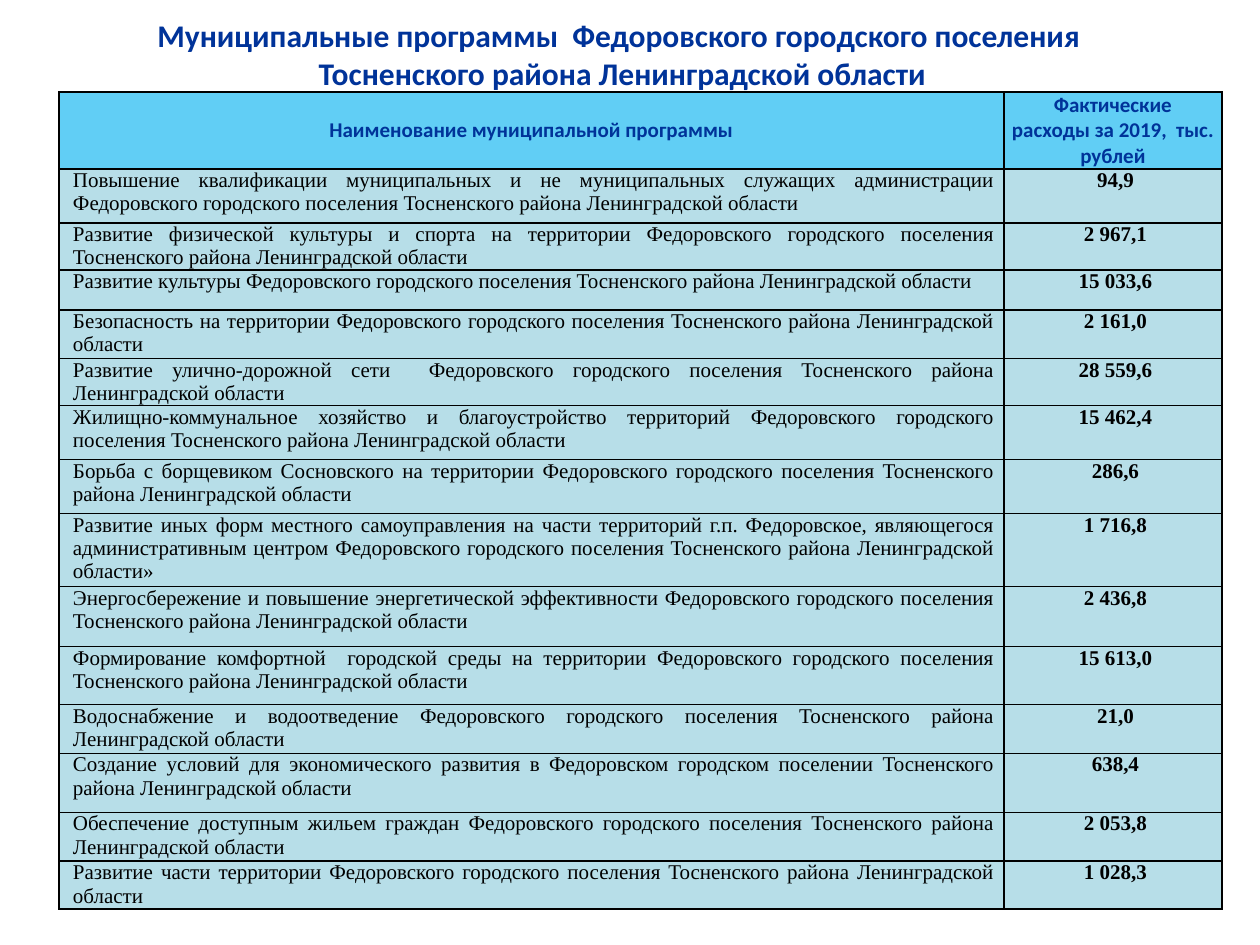
"""Build a slide with a table of municipal programmes and their spending."""
from lxml.etree import SubElement
from pptx import Presentation
from pptx.dml.color import RGBColor
from pptx.enum.text import MSO_ANCHOR, PP_ALIGN
from pptx.oxml.ns import qn
from pptx.util import Pt

TITLE = [
    "Муниципальные программы  Федоровского городского поселения ",
    "Тосненского района Ленинградской области",
]
HEADERS = [
    ["Наименование муниципальной программы"],
    ["Фактические", "расходы за 2019,  тыс. рублей"],
]
HEADER_HEIGHT = 59
PROGRAMMES = [
    ("Повышение квалификации муниципальных и не муниципальных служащих администрации Федоровского городского поселения Тосненского района Ленинградской области", "94,9", 54),
    ("Развитие физической культуры и спорта на территории Федоровского городского поселения Тосненского района Ленинградской области", "2 967,1", 47),
    ("Развитие культуры Федоровского городского поселения Тосненского района Ленинградской области", "15 033,6", 40),
    ("Безопасность на территории Федоровского городского поселения Тосненского района Ленинградской области", "2 161,0", 49),
    ("Развитие улично-дорожной сети  Федоровского городского поселения Тосненского района Ленинградской области", "28 559,6", 39),
    ("Жилищно-коммунальное хозяйство и благоустройство территорий Федоровского городского поселения Тосненского района Ленинградской области", "15 462,4", 54),
    ("Борьба с борщевиком Сосновского на территории Федоровского городского поселения Тосненского района Ленинградской области", "286,6", 54),
    ("Развитие иных форм местного самоуправления на части территорий г.п. Федоровское, являющегося административным центром Федоровского городского поселения Тосненского района Ленинградской области»", "1 716,8", 73),
    ("Энергосбережение и повышение энергетической эффективности Федоровского городского поселения Тосненского района Ленинградской области", "2 436,8", 60),
    ("Формирование комфортной  городской среды на территории Федоровского городского поселения Тосненского района Ленинградской области", "15 613,0", 58),
    ("Водоснабжение и водоотведение Федоровского городского поселения Тосненского района Ленинградской области", "21,0", 49),
    ("Создание условий для экономического развития в Федоровском городском поселении Тосненского района Ленинградской области", "638,4", 59),
    ("Обеспечение доступным жильем граждан Федоровского городского поселения Тосненского района Ленинградской области", "2 053,8", 49),
    ("Развитие части территории Федоровского городского поселения Тосненского района Ленинградской области", "1 028,3", 48),
]
COLUMN_WIDTHS = [945, 218]
TABLE_LEFT, TABLE_TOP = 59, 92
CELL_INSET, CELL_INDENT = 9, 5

NAVY = RGBColor(0x00, 0x33, 0x99)
BLACK = RGBColor(0x00, 0x00, 0x00)
HEADER_BLUE = RGBColor(0x00, 0xB0, 0xF0)
ROW_BLUE = RGBColor(0xB7, 0xDE, 0xE8)


def px(length):
    return int(length * 914400 / 126)


def write(frame, lines, align, font, size, color, bold, indent=0):
    for index, line in enumerate(lines):
        paragraph = frame.paragraphs[0] if index == 0 else frame.add_paragraph()
        paragraph.alignment = align
        if indent:
            properties = paragraph._p.get_or_add_pPr()
            properties.set("marL", str(px(indent)))
            properties.set("indent", "0")
        run = paragraph.add_run()
        run.text = line
        run.font.name = font
        run.font.size = Pt(size)
        run.font.bold = bold
        run.font.color.rgb = color


def style_cell(cell, color, inset, anchor, opacity=None):
    cell.margin_left = cell.margin_right = px(inset)
    cell.margin_top = cell.margin_bottom = 0
    cell.vertical_anchor = anchor
    properties = cell._tc.get_or_add_tcPr()
    for side in ("L", "R", "T", "B"):
        border = SubElement(properties, qn(f"a:ln{side}"), w=str(Pt(1)))
        border_fill = SubElement(border, qn("a:solidFill"))
        SubElement(border_fill, qn("a:srgbClr"), val=str(BLACK))
    cell.fill.solid()
    cell.fill.fore_color.rgb = color
    if opacity:
        shade = properties.find(qn("a:solidFill")).find(qn("a:srgbClr"))
        SubElement(shade, qn("a:alpha"), val=str(opacity * 1000))


def add_programmes(slide):
    heights = [HEADER_HEIGHT] + [height for _, _, height in PROGRAMMES]
    table = slide.shapes.add_table(
        len(heights), len(COLUMN_WIDTHS), px(TABLE_LEFT), px(TABLE_TOP),
        px(sum(COLUMN_WIDTHS)), px(sum(heights))).table
    table.horz_banding = False
    table.first_row = False
    for column, width in zip(table.columns, COLUMN_WIDTHS):
        column.width = px(width)
    for row, height in zip(table.rows, heights):
        row.height = px(height)
    for column, lines in enumerate(HEADERS):
        cell = table.cell(0, column)
        style_cell(cell, HEADER_BLUE, 0, MSO_ANCHOR.MIDDLE, opacity=62)
        write(cell.text_frame, lines, PP_ALIGN.CENTER, "Calibri", 12, NAVY, True)
    for row, (programme, spending, _) in enumerate(PROGRAMMES, start=1):
        parts = [(programme, PP_ALIGN.JUSTIFY, False), (spending, PP_ALIGN.CENTER, True)]
        for column, (text, align, bold) in enumerate(parts):
            cell = table.cell(row, column)
            style_cell(cell, ROW_BLUE, CELL_INSET, MSO_ANCHOR.TOP)
            write(cell.text_frame, [text], align, "Times New Roman", 12, BLACK, bold, CELL_INDENT)


def add_title(slide):
    frame = slide.shapes.add_textbox(0, px(6), px(1245), px(96)).text_frame
    frame.word_wrap = True
    frame.vertical_anchor = MSO_ANCHOR.MIDDLE
    write(frame, TITLE, PP_ALIGN.CENTER, "Calibri", 18, NAVY, True)


def main():
    presentation = Presentation()
    presentation.slide_width, presentation.slide_height = px(1260), px(945)
    slide = presentation.slides.add_slide(presentation.slide_layouts[6])
    add_programmes(slide)
    add_title(slide)
    presentation.save("out.pptx")


if __name__ == "__main__":
    main()
